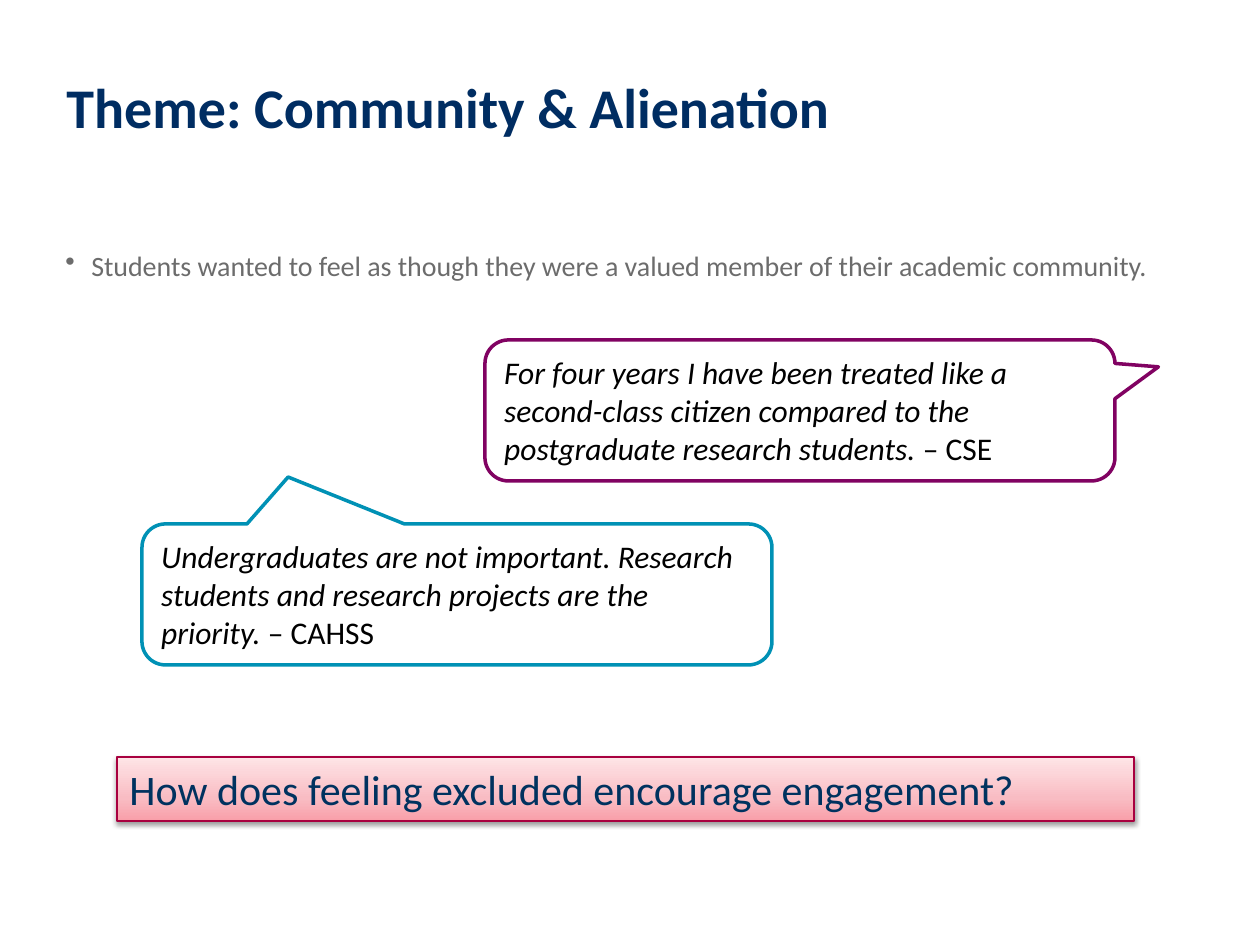
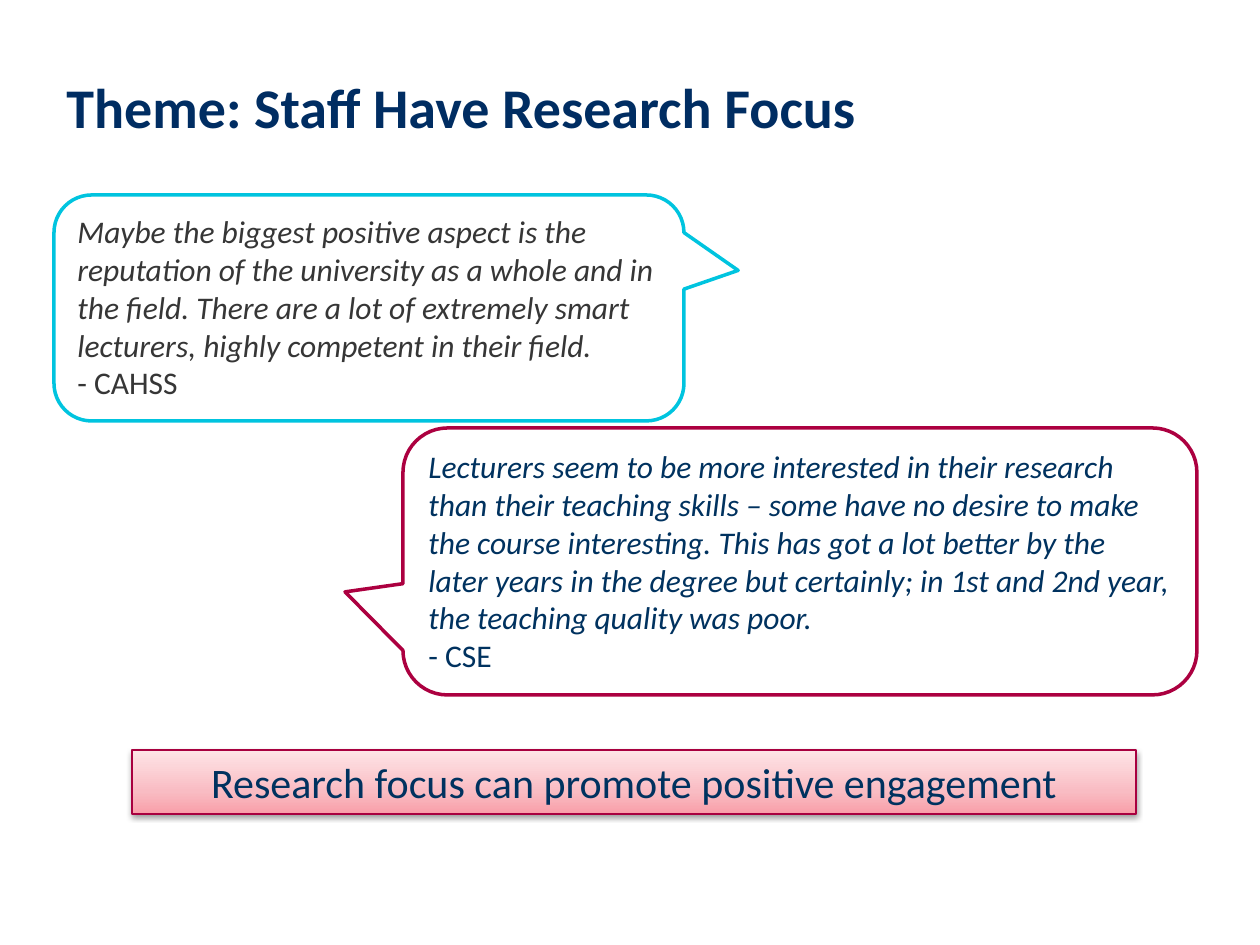
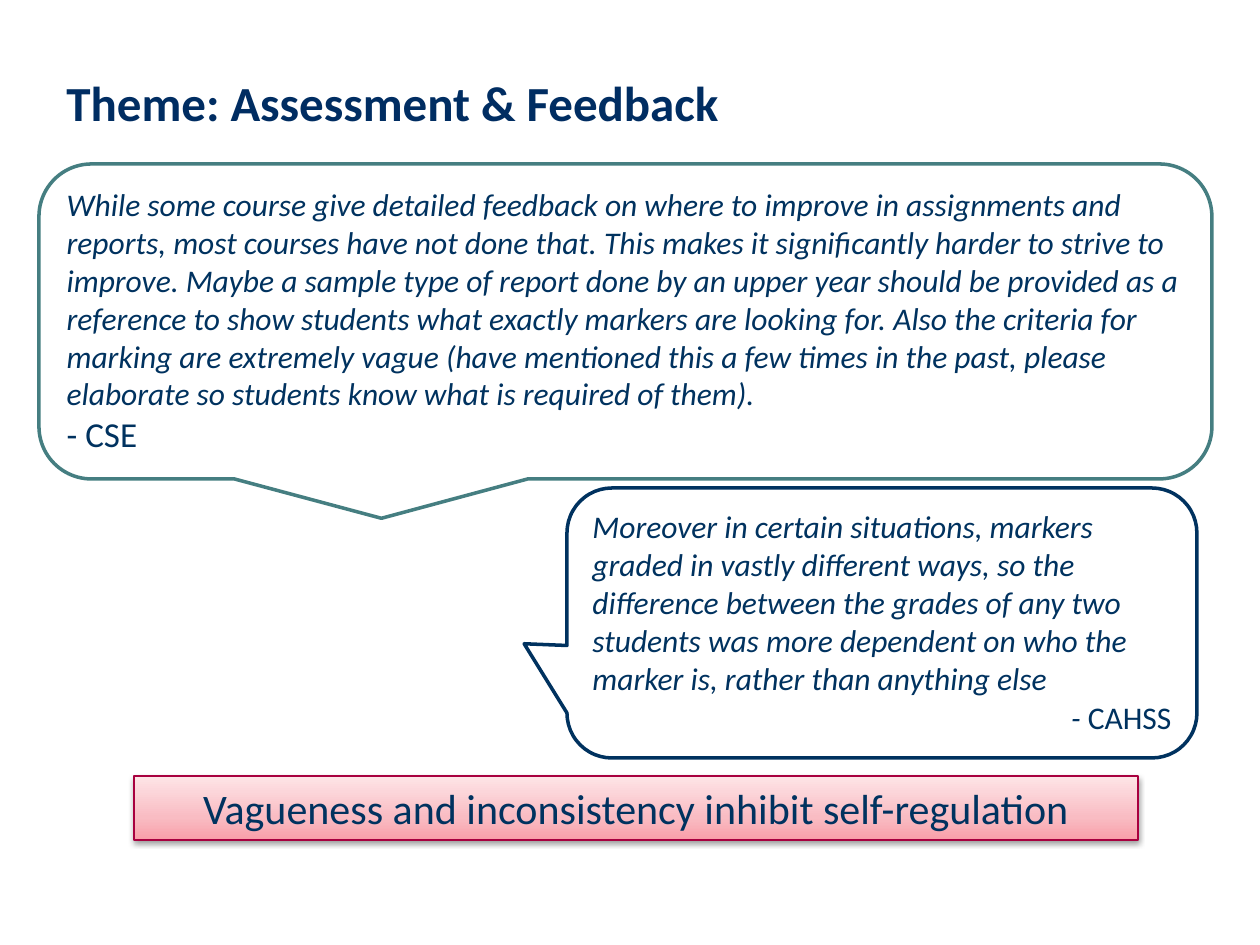
from copy import deepcopy

from lxml.etree import SubElement
from pptx import Presentation
from pptx.dml.color import RGBColor
from pptx.enum.shapes import MSO_SHAPE
from pptx.enum.text import MSO_ANCHOR, MSO_AUTO_SIZE, PP_ALIGN
from pptx.oxml.ns import qn
from pptx.util import Emu, Pt

PX = 914400 / 126
FONT = "Calibri"
COLORS = {
    "title": "002D62", "body": "6C6C6C", "navy": "00325F", "black": "000000",
    "charcoal": "363636", "white": "FFFFFF", "purple": "810262",
    "blue": "0091B5", "cyan": "00C4DF", "crimson": "AC0040", "teal": "457E81",
    "banner_line": "A8003F",
}
BANNER_STOPS = [(0, "F99FA9"), (0.35, "F9BCC3"), (1, "FEE5E7")]
SHADOW = {"blurRad": "40000", "dist": "20000", "dir": "5400000", "rotWithShape": "0"}


def px(*lengths):
    return [Emu(round(n * PX)) for n in lengths]


def rgb(name):
    return RGBColor.from_string(COLORS[name])


def set_all(target, values):
    for name, value in values.items():
        setattr(target, name, value)


class Deck:
    """Holds the presentation, its shared style and the current slide."""

    def __init__(self):
        self.prs = Presentation()
        self.prs.slide_width, self.prs.slide_height = px(1260, 945)
        self.slide = None

    def new_slide(self, title, size=32):
        self.slide = self.prs.slides.add_slide(self.prs.slide_layouts[6])
        tf = self.text_box(54, 66, 1143, 89)
        self.run(tf.paragraphs[0], title, "title", size, bold=True)

    def text_box(self, *box):
        tf = self.slide.shapes.add_textbox(*px(*box)).text_frame
        tf.word_wrap = True
        return tf

    def run(self, p, text, color, size, **style):
        r = p.add_run()
        r.text = text
        set_all(r.font, {"name": FONT, "size": Pt(size), **style})
        r.font.color.rgb = rgb(color)

    def bullet(self, text, *box):
        p = self.text_box(*box).paragraphs[0]
        pPr = p._p.get_or_add_pPr()
        indent = px(26)[0]
        pPr.set("marL", str(indent))
        pPr.set("indent", str(-indent))
        SubElement(pPr, qn("a:buChar"), char="•")
        self.run(p, text, "body", 16)

    def shape(self, kind, box, line, width):
        sp = self.slide.shapes.add_shape(kind, *px(*box))
        sp.shadow.inherit = False
        sp.line.color.rgb = rgb(line)
        sp.line.width = Pt(width)
        set_all(sp.text_frame, {"word_wrap": True, "vertical_anchor": MSO_ANCHOR.TOP,
                                "auto_size": MSO_AUTO_SIZE.SHAPE_TO_FIT_TEXT})
        return sp

    def quote(self, box, tip, line, color, paragraphs):
        """Each paragraph is (runs, format); each run is (text, italic, size)."""
        sp = self.shape(MSO_SHAPE.ROUNDED_RECTANGULAR_CALLOUT, box, line, 2)
        sp.fill.solid()
        sp.fill.fore_color.rgb = rgb("white")
        sp.adjustments[0], sp.adjustments[1] = tip
        tf = sp.text_frame
        for i, (runs, layout) in enumerate(paragraphs):
            p = tf.add_paragraph() if i else tf.paragraphs[0]
            set_all(p, {"alignment": PP_ALIGN.LEFT, **layout})
            for text, italic, size in runs:
                self.run(p, text, color, size, italic=italic)

    def banner(self, text, left, top, width, align=PP_ALIGN.CENTER):
        sp = self.shape(MSO_SHAPE.RECTANGLE, (left, top, width, 64), "banner_line", 0.75)
        sp.fill.gradient()
        sp.fill.gradient_angle = 90
        spPr = sp._element.spPr
        stops = spPr.find(qn("a:gradFill")).find(qn("a:gsLst"))
        stops.append(deepcopy(stops[0]))
        for stop, (position, color) in zip(sp.fill.gradient_stops, BANNER_STOPS):
            stop.position = position
            stop.color.rgb = RGBColor.from_string(color)
        shadow = SubElement(spPr.find(qn("a:effectLst")), qn("a:outerShdw"), SHADOW)
        shade = SubElement(shadow, qn("a:srgbClr"), val=COLORS["black"])
        SubElement(shade, qn("a:alpha"), val="38000")
        p = sp.text_frame.paragraphs[0]
        p.alignment = align
        self.run(p, text, "navy", 24)


def said(text, source, size=18):
    """An italic quote with its upright source on a line of its own."""
    return [([(text, True, 18)], {}), ([(source, False, size)], {})]


def said_inline(text, source):
    """An italic quote followed by its upright source in the same paragraph."""
    return [([(text, True, 18), (source, False, 18)], {})]


def community(deck):
    deck.new_slide("Theme: Community & Alienation")
    deck.bullet("Students wanted to feel as though they were a valued member of "
                "their academic community.", 53, 242, 1144, 169)
    deck.quote((485, 340, 630, 141), (0.569, -0.309), "purple", "black", said_inline(
        "For four years I have been treated like a second-class citizen compared "
        "to the postgraduate research students.", " – CSE"))
    deck.quote((142, 524, 630, 141), (-0.268, -0.833), "blue", "black", said_inline(
        "Undergraduates are not important. Research students and research "
        "projects are the priority. ", "– CAHSS"))
    deck.banner("How does feeling excluded encourage engagement?",
                117, 757, 1017, PP_ALIGN.LEFT)


def research_focus(deck):
    deck.new_slide("Theme: Staff Have Research Focus")
    deck.quote((54, 195, 630, 226), (0.586, -0.166), "cyan", "charcoal", said(
        "Maybe the biggest positive aspect is the reputation of the university as "
        "a whole and in the field. There are a lot of extremely smart lecturers, "
        "highly competent in their field.", "- CAHSS"))
    deck.quote((403, 428, 794, 267), (-0.573, 0.114), "crimson", "navy", said(
        "Lecturers seem to be more interested in their research than their "
        "teaching skills – some have no desire to make the course interesting. "
        "This has got a lot better by the later years in the degree but "
        "certainly; in 1st and 2nd year, the teaching quality was poor.", "- CSE"))
    deck.banner("Research focus can promote positive engagement", 132, 750, 1004)


def assessment(deck):
    deck.new_slide("Theme: Assessment & Feedback", 28)
    deck.quote((39, 164, 1173, 315), (-0.208, 0.625), "teal", "navy", said(
        "While some course give detailed feedback on where to improve in "
        "assignments and reports, most courses have not done that. This makes it "
        "significantly harder to strive to improve. Maybe a sample type of report "
        "done by an upper year should be provided as a reference to show students "
        "what exactly markers are looking for. Also the criteria for marking are "
        "extremely vague (have mentioned this a few times in the past, please "
        "elaborate so students know what is required of them).", "- CSE", 20))
    deck.quote((567, 488, 630, 270), (-0.568, 0.077), "navy", "navy", [
        ([("Moreover in certain situations, markers graded in vastly different "
           "ways, so the difference between the grades of any two students was "
           "more dependent on who the marker is, rather than anything else",
           True, 18)], {}),
        ([("-", True, 18), (" CAHSS", False, 18)],
         {"alignment": PP_ALIGN.RIGHT, "line_spacing": 1.05, "space_after": Pt(8)}),
    ])
    deck.banner("Vagueness and inconsistency inhibit self-regulation", 134, 776, 1004)


def main():
    deck = Deck()
    for build in (community, research_focus, assessment):
        build(deck)
    deck.prs.save("out.pptx")


if __name__ == "__main__":
    main()
